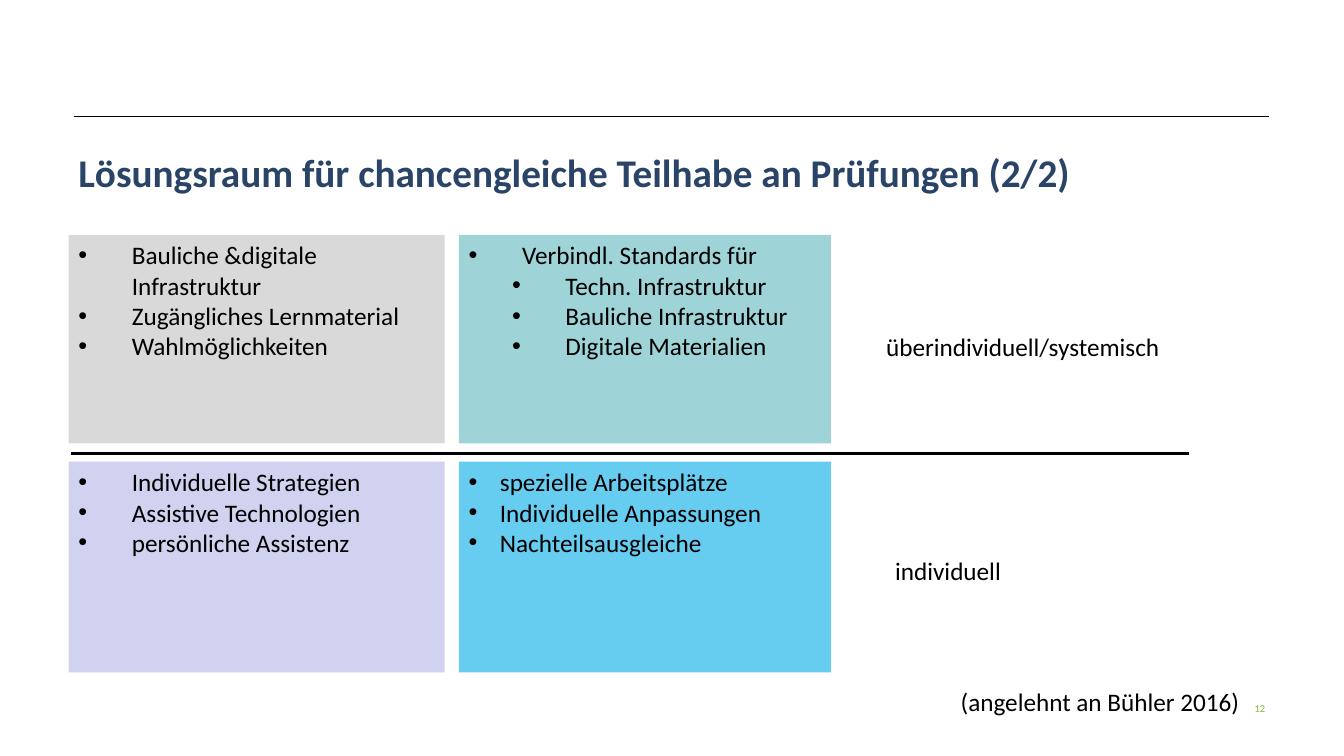
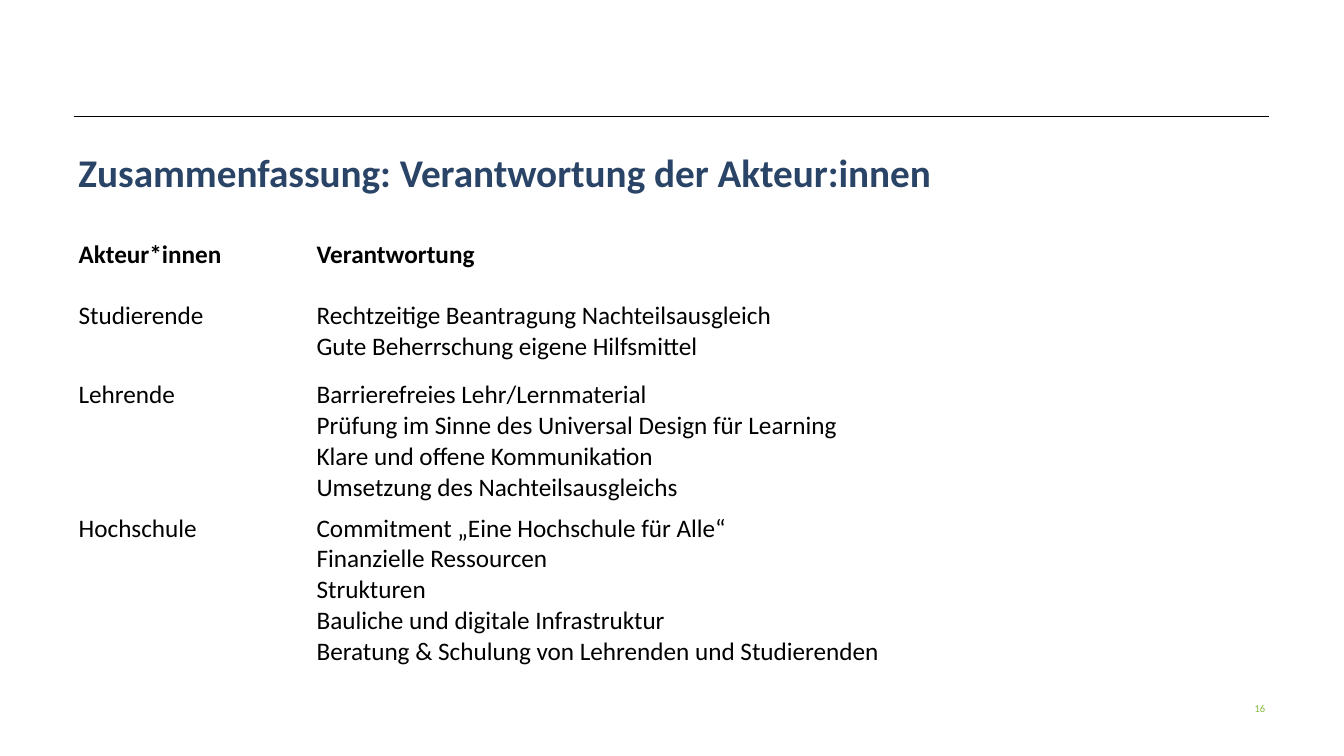
from dataclasses import dataclass

from lxml.etree import SubElement
from pptx import Presentation
from pptx.dml.color import RGBColor
from pptx.enum.shapes import MSO_CONNECTOR, MSO_SHAPE
from pptx.enum.text import MSO_ANCHOR, PP_ALIGN
from pptx.oxml.ns import qn
from pptx.presentation import Presentation as PresentationType
from pptx.slide import Slide
from pptx.text.text import TextFrame, _Paragraph as Paragraph
from pptx.util import Inches, Pt

FONT = "Calibri"
COLORS = {
    "text": "000000",
    "title": "294466",
    "number": "83B73D",
    "white": "FFFFFF",
    "grey": "D9D9D9",
    "lilac": "D1D1F0",
    "teal": "9ED3D7",
    "blue": "00AAE6",
}
LEFT = 0.68
CONTENT_TOP = 2.33
SUB_INDENT = 0.43


@dataclass(frozen=True)
class Bullet:
    text: str
    level: int = 0


@dataclass(frozen=True)
class Panel:
    column: int
    row: int
    color: str
    bullets: tuple[Bullet, ...]
    hanging: float = 0.53
    opacity: int = 100


@dataclass(frozen=True)
class Label:
    text: str
    left: float
    top: float
    width: float


@dataclass(frozen=True)
class TableRow:
    height: float
    actor: str
    duties: tuple[str, ...]
    bold: bool = False


COLUMNS = ((LEFT, 3.73), (4.55, 3.69))
ROWS = ((CONTENT_TOP, 2.07), (4.58, 2.09))

PANELS = (
    Panel(0, 0, "grey", (
        Bullet("Bauliche &digitale Infrastruktur"),
        Bullet("Zugängliches Lernmaterial"),
        Bullet("Wahlmöglichkeiten"),
    )),
    Panel(0, 1, "lilac", (
        Bullet("Individuelle Strategien"),
        Bullet("Assistive Technologien"),
        Bullet("persönliche Assistenz"),
    )),
    Panel(1, 0, "teal", (
        Bullet("Verbindl. Standards für"),
        Bullet("Techn. Infrastruktur", 1),
        Bullet("Bauliche Infrastruktur", 1),
        Bullet("Digitale Materialien", 1),
    )),
    Panel(1, 1, "blue", (
        Bullet("spezielle Arbeitsplätze"),
        Bullet("Individuelle Anpassungen"),
        Bullet("Nachteilsausgleiche"),
    ), hanging=0.31, opacity=60),
)

LABELS = (
    Label("überindividuell/systemisch", 8.69, 3.24, 3.38),
    Label("individuell", 8.78, 5.46, 1.79),
    Label("(angelehnt an Bühler 2016)", 9.43, 6.76, 3.11),
)

TABLE_COLUMNS = (2.36, 9.48)
TABLE_ROWS = (
    TableRow(0.6, "Akteur*innen", ("Verantwortung",), bold=True),
    TableRow(0.79, "Studierende", (
        "Rechtzeitige Beantragung Nachteilsausgleich\nGute Beherrschung eigene Hilfsmittel",
    )),
    TableRow(1.32, "Lehrende", (
        "Barrierefreies Lehr/Lernmaterial\nPrüfung im Sinne des Universal Design für Learning",
        "Klare und offene Kommunikation",
        "Umsetzung des Nachteilsausgleichs",
    )),
    TableRow(1.82, "Hochschule", (
        "Commitment „Eine Hochschule für Alle“",
        "Finanzielle Ressourcen",
        "Strukturen",
        "Bauliche und digitale Infrastruktur",
        "Beratung & Schulung von Lehrenden und Studierenden",
    )),
)


def rgb(name: str) -> RGBColor:
    return RGBColor.from_string(COLORS[name])


# Text helpers
def format_runs(paragraph: Paragraph, size: float = 18, color: str = "text",
                bold: bool = False) -> None:
    for run in paragraph.runs:
        run.font.name = FONT
        run.font.size = Pt(size)
        run.font.bold = bold
        run.font.color.rgb = rgb(color)


def fill_paragraphs(text_frame: TextFrame, texts: tuple[str, ...]) -> list[Paragraph]:
    for index, text in enumerate(texts):
        paragraph = text_frame.add_paragraph() if index else text_frame.paragraphs[0]
        paragraph.text = text
    return list(text_frame.paragraphs)


def add_text(slide: Slide, text: str, left: float, top: float, width: float,
             height: float = 0.41, size: float = 18, color: str = "text",
             bold: bool = False) -> TextFrame:
    shape = slide.shapes.add_textbox(Inches(left), Inches(top), Inches(width), Inches(height))
    text_frame = shape.text_frame
    text_frame.word_wrap = True
    text_frame.text = text
    format_runs(text_frame.paragraphs[0], size, color, bold)
    return text_frame


def set_bullet(paragraph: Paragraph, level: int, hanging: float) -> None:
    paragraph.level = level
    properties = paragraph._p.get_or_add_pPr()
    properties.set("marL", str(Inches(hanging + level * SUB_INDENT)))
    properties.set("indent", str(-Inches(hanging)))
    bullet_color = SubElement(properties, qn("a:buClr"))
    SubElement(bullet_color, qn("a:srgbClr"), val=COLORS["text"])
    SubElement(properties, qn("a:buFont"), typeface="Arial")
    SubElement(properties, qn("a:buChar"), char="•")


# Parts shared by the slides
def add_rule(slide: Slide, start: float, end: float, top: float, width: float) -> None:
    connector = slide.shapes.add_connector(
        MSO_CONNECTOR.STRAIGHT, Inches(start), Inches(top), Inches(end), Inches(top))
    connector.line.color.rgb = rgb("text")
    connector.line.width = Pt(width)
    SubElement(connector._element.spPr, qn("a:effectLst"))


def add_base_slide(presentation: PresentationType, title: str, number: int) -> Slide:
    slide = presentation.slides.add_slide(presentation.slide_layouts[6])
    add_rule(slide, 0.73, 12.59, 1.16, 0.75)
    number_frame = add_text(slide, str(number), 10.89, 6.92, 1.66, 0.5, 7.5, "number")
    number_frame.margin_right = 0
    number_frame.paragraphs[0].alignment = PP_ALIGN.RIGHT
    title_frame = add_text(slide, title, LEFT, 1.16, 11.86, 1.08, 28, "title", True)
    title_frame.vertical_anchor = MSO_ANCHOR.MIDDLE
    return slide


# Content objects
def add_panel(slide: Slide, panel: Panel) -> None:
    left, width = COLUMNS[panel.column]
    top, height = ROWS[panel.row]
    shape = slide.shapes.add_shape(
        MSO_SHAPE.RECTANGLE, Inches(left), Inches(top), Inches(width), Inches(height))
    shape.shadow.inherit = False
    shape.fill.solid()
    shape.fill.fore_color.rgb = rgb(panel.color)
    shape.line.fill.background()
    if panel.opacity < 100:
        fill_color = shape._element.spPr.find(f"{qn('a:solidFill')}/{qn('a:srgbClr')}")
        SubElement(fill_color, qn("a:alpha"), val=str(panel.opacity * 1000))
    text_frame = shape.text_frame
    text_frame.word_wrap = True
    text_frame.vertical_anchor = MSO_ANCHOR.TOP
    paragraphs = fill_paragraphs(text_frame, tuple(bullet.text for bullet in panel.bullets))
    for paragraph, bullet in zip(paragraphs, panel.bullets):
        paragraph.alignment = PP_ALIGN.LEFT
        set_bullet(paragraph, bullet.level, panel.hanging)
        format_runs(paragraph)


def add_duty_table(slide: Slide) -> None:
    height = sum(row.height for row in TABLE_ROWS)
    table = slide.shapes.add_table(
        len(TABLE_ROWS), len(TABLE_COLUMNS), Inches(LEFT), Inches(CONTENT_TOP),
        Inches(sum(TABLE_COLUMNS)), Inches(height)).table
    table.horz_banding = False
    for column, width in zip(table.columns, TABLE_COLUMNS):
        column.width = Inches(width)
    for table_row, row in zip(table.rows, TABLE_ROWS):
        table_row.height = Inches(row.height)
        for cell, texts in zip(table_row.cells, ((row.actor,), row.duties)):
            cell.fill.solid()
            cell.fill.fore_color.rgb = rgb("white")
            for paragraph in fill_paragraphs(cell.text_frame, texts):
                format_runs(paragraph, bold=row.bold)


# Slides
def add_solution_slide(presentation: PresentationType) -> None:
    slide = add_base_slide(
        presentation, "Lösungsraum für chancengleiche Teilhabe an Prüfungen (2/2)", 12)
    for panel in PANELS:
        add_panel(slide, panel)
    add_rule(slide, 0.7, 11.79, 4.5, 0)
    for label in LABELS:
        add_text(slide, label.text, label.left, label.top, label.width)


def add_summary_slide(presentation: PresentationType) -> None:
    slide = add_base_slide(
        presentation, "Zusammenfassung: Verantwortung der Akteur:innen", 16)
    add_duty_table(slide)


def main() -> None:
    presentation = Presentation()
    presentation.slide_width = Inches(13.33)
    presentation.slide_height = Inches(7.5)
    add_solution_slide(presentation)
    add_summary_slide(presentation)
    presentation.save("out.pptx")


if __name__ == "__main__":
    main()
